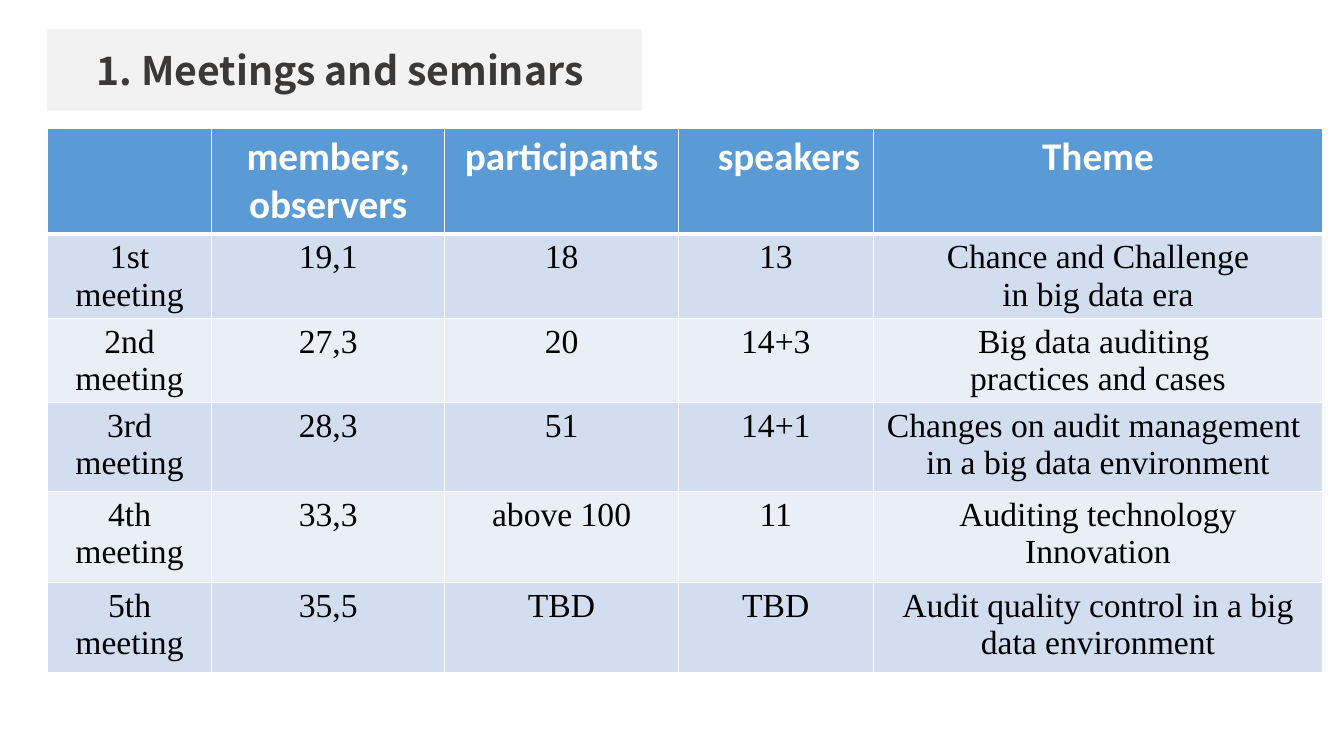
import pptx
import pptx.dml.color
import pptx.enum.shapes
import pptx.enum.text
import pptx.oxml.ns
import pptx.util
from lxml import etree

Inches = pptx.util.Inches
Pt = pptx.util.Pt

LEFT = 0.47
COLUMN_WIDTHS = [1.63, 2.31, 2.32, 1.93, 4.46]
ROW_HEIGHTS = [0.67, 0.65, 0.65, 0.88, 0.9, 0.9]
SPEAKERS_COLUMN = 3
HEADER_FILL = "5B9BD5"
BAND_FILLS = ["D2DEEF", "EAEFF7"]
HEADER_FORMAT = {"size": 28, "font": "Calibri", "color": "FFFFFF", "bold": True}
BODY_FORMAT = {"size": 24, "font": "Times New Roman", "color": "000000"}
TITLE_FORMAT = {"size": 28, "font": "Noto Sans CJK SC", "color": "3B3838", "bold": True}
MEETINGS = [
    ["", "members,\nobservers", "participants", "speakers", "Theme"],
    ["1st meeting", "19,1", "18", "13", "Chance and Challenge\nin big data era"],
    ["2nd meeting", "27,3", "20", "14+3", "Big data auditing \npractices and cases"],
    ["3rd meeting", "28,3", "51", "14+1",
     "Changes on audit management \nin a big data environment"],
    ["4th meeting", "33,3", "above 100", "11", "Auditing technology\nInnovation"],
    ["5th meeting", "35,5", "TBD", "TBD",
     "Audit quality control in a big data environment"],
]


def paint(target, color):
    """Give a fill one solid colour."""
    target.solid()
    target.fore_color.rgb = pptx.dml.color.RGBColor.from_string(color)


def write_text(frame, text, size, font, color, bold=False):
    """Write centred paragraphs, one for each line of the text."""
    for index, line in enumerate(text.split("\n")):
        para = frame.add_paragraph() if index else frame.paragraphs[0]
        para.alignment = pptx.enum.text.PP_ALIGN.CENTER
        span = para.add_run()
        span.text = line
        span.font.size = Pt(size)
        span.font.name = font
        span.font.bold = bold
        paint(span.font.fill, color)


def add_borders(cell, top, bottom):
    """Draw white cell borders with the given top and bottom widths."""
    properties = cell._tc.get_or_add_tcPr()
    for side, width in [("L", 1), ("R", 1), ("T", top), ("B", bottom)]:
        line = etree.SubElement(
            properties, pptx.oxml.ns.qn(f"a:ln{side}"), w=str(Pt(width)))
        fill = etree.SubElement(line, pptx.oxml.ns.qn("a:solidFill"))
        etree.SubElement(fill, pptx.oxml.ns.qn("a:srgbClr"), val="FFFFFF")


def add_title(page, text):
    """Add the grey title bar."""
    box = page.shapes.add_shape(
        pptx.enum.shapes.MSO_SHAPE.RECTANGLE,
        Inches(LEFT), Inches(0.29), Inches(5.89), Inches(0.8))
    box.shadow.inherit = False
    paint(box.fill, "F2F2F2")
    paint(box.line.fill, "F2F2F2")
    box.line.width = Pt(1)
    box.text_frame.word_wrap = True
    box.text_frame.vertical_anchor = pptx.enum.text.MSO_ANCHOR.MIDDLE
    write_text(box.text_frame, text, **TITLE_FORMAT)


def add_meeting_table(page):
    """Add the banded table of meetings."""
    table = page.shapes.add_table(
        len(ROW_HEIGHTS), len(COLUMN_WIDTHS), Inches(LEFT), Inches(1.27),
        Inches(sum(COLUMN_WIDTHS)), Inches(sum(ROW_HEIGHTS))).table
    for column, width in zip(table.columns, COLUMN_WIDTHS):
        column.width = Inches(width)
    for row, height in zip(table.rows, ROW_HEIGHTS):
        row.height = Inches(height)
    for row_index, values in enumerate(MEETINGS):
        header = row_index == 0
        for column_index, value in enumerate(values):
            cell = table.cell(row_index, column_index)
            add_borders(cell, 3 if row_index == 1 else 1, 3 if header else 1)
            paint(cell.fill, HEADER_FILL if header else BAND_FILLS[(row_index - 1) % 2])
            if value:
                write_text(cell.text_frame, value,
                           **(HEADER_FORMAT if header else BODY_FORMAT))
    table.cell(0, SPEAKERS_COLUMN).margin_left = Inches(0.36)


def main():
    """Build the meetings slide and save it."""
    deck = pptx.Presentation()
    deck.slide_width = Inches(13.33)
    deck.slide_height = Inches(7.5)
    page = deck.slides.add_slide(deck.slide_layouts[6])
    add_meeting_table(page)
    add_title(page, "1. Meetings and seminars ")
    deck.save("out.pptx")


if __name__ == "__main__":
    main()
